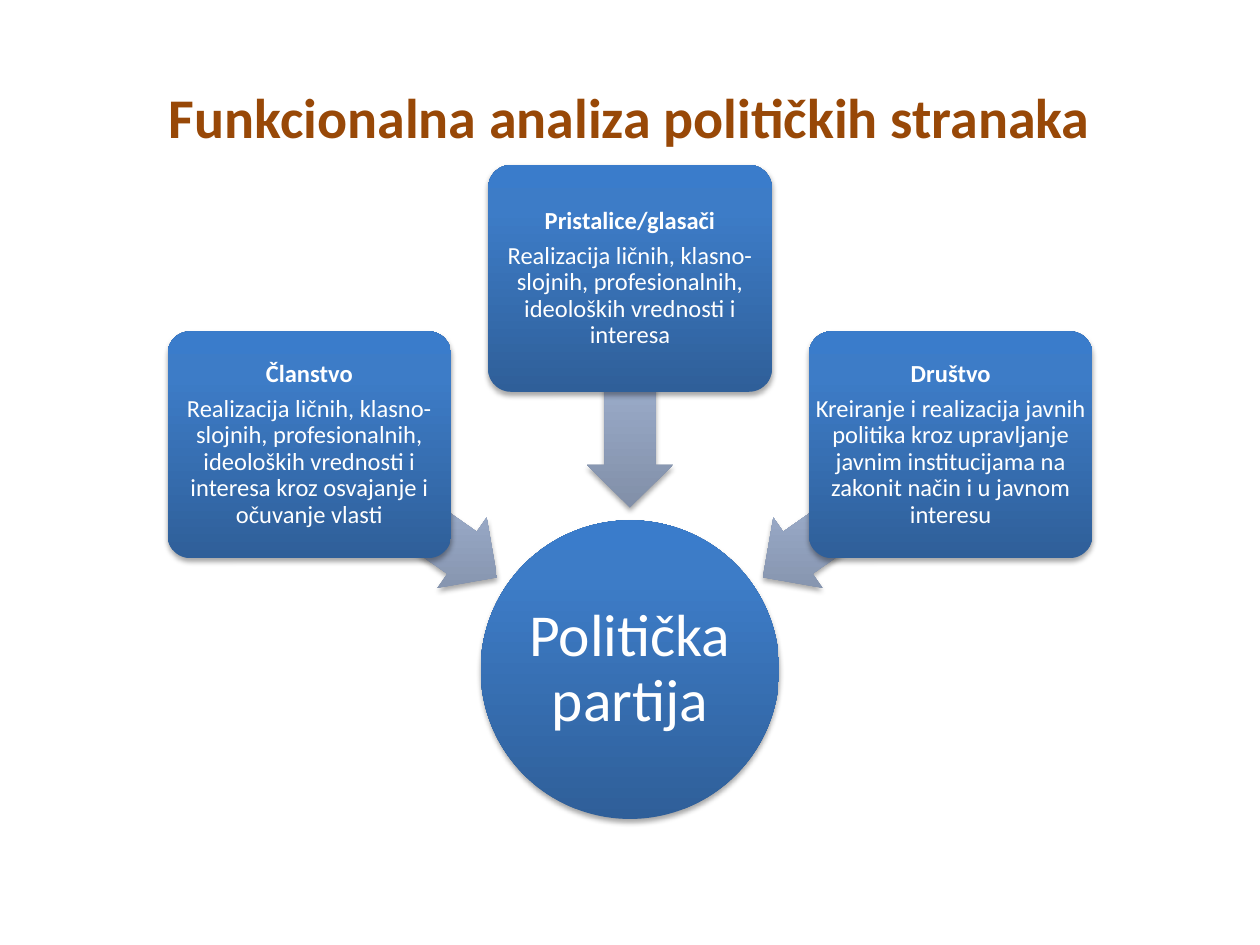
from lxml import etree
from pptx import Presentation
from pptx.dml.color import RGBColor
from pptx.enum.shapes import MSO_SHAPE
from pptx.enum.text import MSO_ANCHOR, PP_ALIGN
from pptx.oxml import parse_xml
from pptx.oxml.ns import nsdecls, qn
from pptx.util import Inches, Pt

ROUNDED = MSO_SHAPE.ROUNDED_RECTANGLE
OVAL = MSO_SHAPE.OVAL
LEFT_ARROW = MSO_SHAPE.LEFT_ARROW
MIDDLE = MSO_ANCHOR.MIDDLE
CENTER = PP_ALIGN.CENTER

TITLE = "Funkcionalna analiza političkih stranaka"
HUB = "Politička partija"
FUNCTIONS = [
    ("Članstvo", "Realizacija ličnih, klasno-slojnih, profesionalnih, ideoloških "
     "vrednosti i interesa kroz osvajanje i očuvanje vlasti"),
    ("Pristalice/glasači", "Realizacija ličnih, klasno-slojnih, profesionalnih, "
     "ideoloških vrednosti i interesa"),
    ("Društvo", "Kreiranje i realizacija javnih politika kroz upravljanje javnim "
     "institucijama na zakonit način i u javnom interesu"),
]
BLUE = [(0, "2F5F99"), (80, "3D7CC7"), (100, "3A7CCB")]
GREY = [(0, "818FA8"), (80, "A7B9DA"), (100, "A7BADC")]
FONT = "Calibri"

WIDTH, HEIGHT = 10, 7.5
MIDDLE_X = WIDTH / 2
HUB_SIZE, HUB_Y = 2.37, 5.315
CARD_WIDTH, CARD_HEIGHT, CARD_STEP = 2.25, 1.8, 2.545
CARD_Y = [3.53, 2.21, 3.53]
ARROW_WIDTH, ARROW_HEIGHT, ARROW_STEP = 1.82, 0.68, 1.8
ARROW_Y = [4.06, 3.12, 4.06]
ARROW_TURN = [215, 270, 325]


def color(value):
    return RGBColor.from_string(value)


def centered(x, y, width, height):
    return [Inches(v) for v in (x - width / 2, y - height / 2, width, height)]


def add_figure(slide, preset, box, stops, adjustments=()):
    shape = slide.shapes.add_shape(preset, *box)
    for index, value in enumerate(adjustments):
        shape.adjustments[index] = value
    shape.line.fill.background()
    properties = shape._element.spPr
    gradient = parse_xml(
        f'<a:gradFill {nsdecls("a")} rotWithShape="0"><a:gsLst/>'
        '<a:lin ang="16200000" scaled="0"/></a:gradFill>')
    for position, value in stops:
        stop = etree.SubElement(gradient[0], qn("a:gs"), pos=str(position * 1000))
        etree.SubElement(stop, qn("a:srgbClr"), val=value)
    properties.find(qn("a:prstGeom")).addnext(gradient)
    properties.append(parse_xml(
        f'<a:effectLst {nsdecls("a")}><a:outerShdw blurRad="{Pt(3.1)}" '
        f'dist="{Pt(1.8)}" dir="5400000" rotWithShape="0"><a:srgbClr val="000000">'
        '<a:alpha val="35000"/></a:srgbClr></a:outerShdw></a:effectLst>'))
    return shape


def add_run(paragraph, text, size, value, bold):
    run = paragraph.add_run()
    run.text = text
    run.font.name = FONT
    run.font.size = Pt(size)
    run.font.bold = bold
    run.font.color.rgb = color(value)


def add_label(slide, box, lines, size, inset):
    frame = slide.shapes.add_textbox(*box).text_frame
    frame.word_wrap = True
    frame.vertical_anchor = MIDDLE
    frame.margin_left = frame.margin_right = Inches(inset)
    frame.margin_top = frame.margin_bottom = Inches(inset)
    for index, (text, bold) in enumerate(lines):
        paragraph = frame.add_paragraph() if index else frame.paragraphs[0]
        paragraph.alignment = CENTER
        paragraph.line_spacing = 0.9
        paragraph.space_after = Pt(size * 0.35)
        add_run(paragraph, text, size, "FFFFFF", bold)


def main():
    presentation = Presentation()
    presentation.slide_width = Inches(WIDTH)
    presentation.slide_height = Inches(HEIGHT)
    slide = presentation.slides.add_slide(presentation.slide_layouts[5])

    title = slide.shapes.title
    title.left, title.top, title.width, title.height = centered(MIDDLE_X, 0.925, 9, 1.25)
    title.text_frame.vertical_anchor = MIDDLE
    heading = title.text_frame.paragraphs[0]
    heading.alignment = CENTER
    add_run(heading, TITLE, 32, "984807", True)

    hub_box = centered(MIDDLE_X, HUB_Y, HUB_SIZE, HUB_SIZE)
    add_figure(slide, OVAL, hub_box, BLUE)
    add_label(slide, centered(MIDDLE_X, HUB_Y, HUB_SIZE * 0.71, HUB_SIZE * 0.71),
              [(HUB, False)], 34, 0.02)

    for index, (name, description) in enumerate(FUNCTIONS):
        column = index - 1
        arrow_box = centered(MIDDLE_X + column * ARROW_STEP, ARROW_Y[index],
                             ARROW_WIDTH, ARROW_HEIGHT)
        arrow = add_figure(slide, LEFT_ARROW, arrow_box, GREY, (0.6, 0.5))
        arrow.rotation = ARROW_TURN[index]
        card_box = centered(MIDDLE_X + column * CARD_STEP, CARD_Y[index],
                            CARD_WIDTH, CARD_HEIGHT)
        add_figure(slide, ROUNDED, card_box, BLUE, (0.1,))
        add_label(slide, card_box, [(name, True), (description, False)], 14, 0.03)

    presentation.save("out.pptx")


if __name__ == "__main__":
    main()
